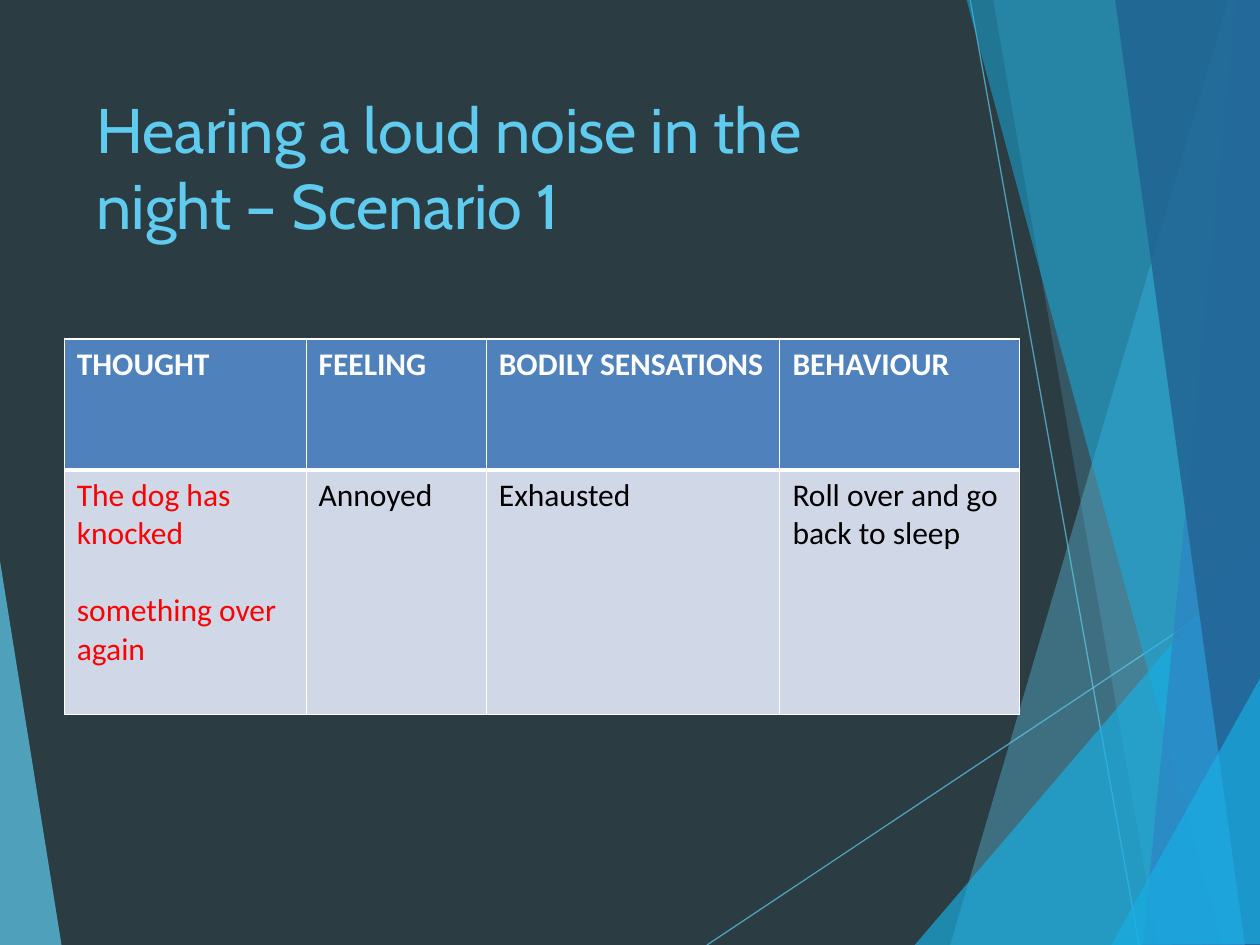
from typing import NamedTuple

from lxml import etree
from pptx import Presentation
from pptx.dml.color import RGBColor
from pptx.enum.shapes import MSO_CONNECTOR
from pptx.enum.text import MSO_ANCHOR
from pptx.oxml.ns import qn
from pptx.util import Pt

STRAIGHT = MSO_CONNECTOR.STRAIGHT
TOP = MSO_ANCHOR.TOP

DARK = RGBColor(0x2C, 0x3C, 0x43)
SKY = RGBColor(0x5F, 0xCB, 0xEF)
CYAN = RGBColor(0x17, 0xB0, 0xE4)
BLUE = RGBColor(0x2E, 0x83, 0xC3)
NAVY = RGBColor(0x22, 0x62, 0x92)
HEAD = RGBColor(0x4F, 0x81, 0xBD)
PALE = RGBColor(0xD0, 0xD8, 0xE8)
WHITE = RGBColor(0xFF, 0xFF, 0xFF)
BLACK = RGBColor(0, 0, 0)
RED = RGBColor(0xFF, 0, 0)

WIDE, HIGH = 720, 540
THIN, THICK = 0.77, 2.31


class Pane(NamedTuple):
    points: list[tuple[float, float]]
    color: RGBColor
    alpha: int


class Ray(NamedTuple):
    start: tuple[float, float]
    end: tuple[float, float]


class Cell(NamedTuple):
    lines: list[str]
    fill: RGBColor
    color: RGBColor
    bold: bool = False


EDGE = Pane([(-0.7, 316), (35.3, 540.7), (-0.7, 540)], SKY, 70)
RAYS = [Ray((404, HIGH), (720.7, 329)), Ray((554.4, 0), (651, HIGH))]
PANES = [
    Pane([(702, 0), (543, 540), (721.4, 540.7), (720.7, 0.7)], SKY, 36),
    Pane([(567.4, -0.7), (661.7, 540), (720.7, 540), (720.7, -0.7)], SKY, 20),
    Pane([(522.7, 540), (720, 309), (720.7, 540)], CYAN, 66),
    Pane([(552.2, -0.7), (698.4, 540), (720.7, 539.3), (720.7, -0.7)], CYAN, 50),
    Pane([(706.3, -0.7), (653, 540), (720.7, 540), (720, -0.7)], BLUE, 70),
    Pane([(637.2, -0.7), (711.4, 540), (721.4, 540), (720, -0.7)], NAVY, 82),
    Pane([(635, 540), (721.4, 385.2), (721.4, 539.3)], CYAN, 66),
]

COLS = [138.2, 103, 167.8, 136.8]
ROWS = [74.9, 139.7]
HEADS = ["THOUGHT", "FEELING", "BODILY SENSATIONS", "BEHAVIOUR"]
GRID = [
    [Cell([text], HEAD, WHITE, True) for text in HEADS],
    [
        Cell(["The dog has knocked", "something over again"], PALE, RED),
        Cell(["Annoyed"], PALE, BLACK),
        Cell(["Exhausted"], PALE, BLACK),
        Cell(["Roll over and go back to sleep"], PALE, BLACK),
    ],
]


def fade(shape, alpha: int) -> None:
    """Set the opacity, in percent, of the shape's one colour."""
    color = next(shape._element.spPr.iter(qn("a:srgbClr")))
    etree.SubElement(color, qn("a:alpha"), val=str(alpha * 1000))


def draw_pane(slide, pane: Pane) -> None:
    first, *rest = [(Pt(x), Pt(y)) for x, y in pane.points]
    build = slide.shapes.build_freeform(*first)
    build.add_line_segments(rest, close=True)
    shape = build.convert_to_shape()
    shape.shadow.inherit = False
    shape.fill.solid()
    shape.fill.fore_color.rgb = pane.color
    shape.line.fill.background()
    fade(shape, pane.alpha)


def draw_ray(slide, ray: Ray) -> None:
    ends = [Pt(n) for n in ray.start + ray.end]
    line = slide.shapes.add_connector(STRAIGHT, *ends)
    line.line.color.rgb = SKY
    line.line.width = Pt(0.75)
    fade(line, 70)
    etree.SubElement(line._element.spPr, qn("a:effectLst"))


def draw_title(slide) -> None:
    box = slide.shapes.add_textbox(Pt(48.2), Pt(48.2), Pt(499.7), Pt(103.7))
    frame = box.text_frame
    frame.word_wrap = True
    frame.vertical_anchor = TOP
    frame.text = "Hearing a loud noise in the night – Scenario 1"
    font = frame.paragraphs[0].font
    font.name, font.size = "Cabin", Pt(36)
    font.color.rgb = SKY


def rule_cell(cell, top: float, bottom: float) -> None:
    """Give a cell white borders, placed ahead of its fill."""
    props = cell._tc.get_or_add_tcPr()
    sides = {"L": THIN, "R": THIN, "T": top, "B": bottom}
    for i, (side, width) in enumerate(sides.items()):
        line = etree.Element(qn(f"a:ln{side}"), w=str(Pt(width)))
        fill = etree.SubElement(line, qn("a:solidFill"))
        etree.SubElement(fill, qn("a:srgbClr"), val=str(WHITE))
        props.insert(i, line)


def fill_cell(cell, data: Cell) -> None:
    cell.fill.solid()
    cell.fill.fore_color.rgb = data.fill
    frame = cell.text_frame
    frame.text = "\n".join(data.lines)
    for i, para in enumerate(frame.paragraphs):
        font = para.font
        font.name, font.size, font.bold = "Calibri", Pt(18), data.bold
        font.color.rgb = data.color
        if i:
            para.space_before = Pt(22)


def draw_table(slide) -> None:
    frame = slide.shapes.add_table(len(ROWS), len(COLS), Pt(36.7), Pt(193.7),
                                   Pt(sum(COLS)), Pt(sum(ROWS)))
    table = frame.table
    for col, width in zip(table.columns, COLS):
        col.width = Pt(width)
    for row, height in zip(table.rows, ROWS):
        row.height = Pt(height)
    for r, cells in enumerate(GRID):
        top, bottom = (THICK, THIN) if r else (THIN, THICK)
        for c, data in enumerate(cells):
            cell = table.cell(r, c)
            fill_cell(cell, data)
            rule_cell(cell, top, bottom)


def main() -> None:
    deck = Presentation()
    deck.slide_width, deck.slide_height = Pt(WIDE), Pt(HIGH)
    slide = deck.slides.add_slide(deck.slide_layouts[6])
    back = slide.background.fill
    back.solid()
    back.fore_color.rgb = DARK
    draw_pane(slide, EDGE)
    for ray in RAYS:
        draw_ray(slide, ray)
    for pane in PANES:
        draw_pane(slide, pane)
    draw_title(slide)
    draw_table(slide)
    deck.save("out.pptx")


if __name__ == "__main__":
    main()
